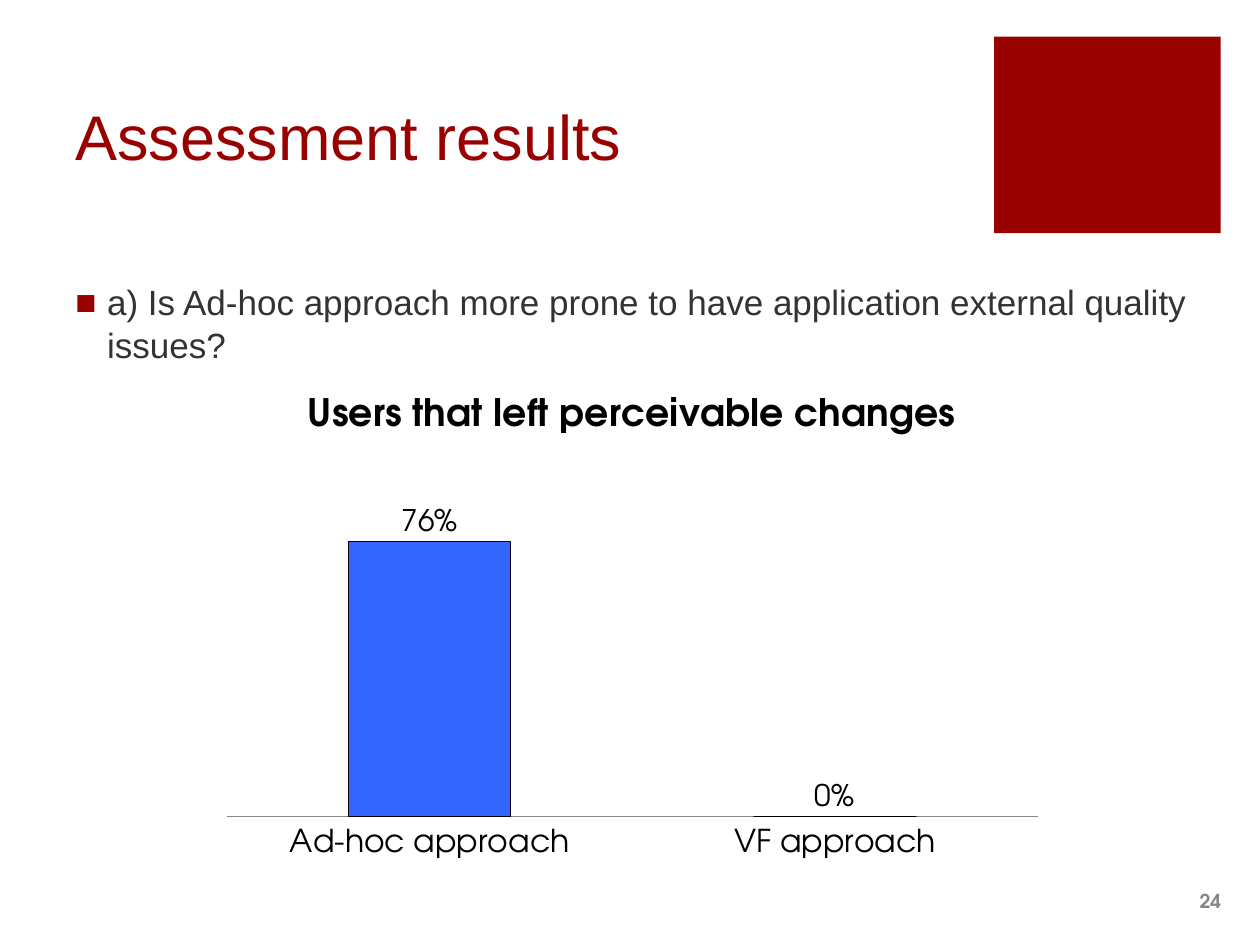
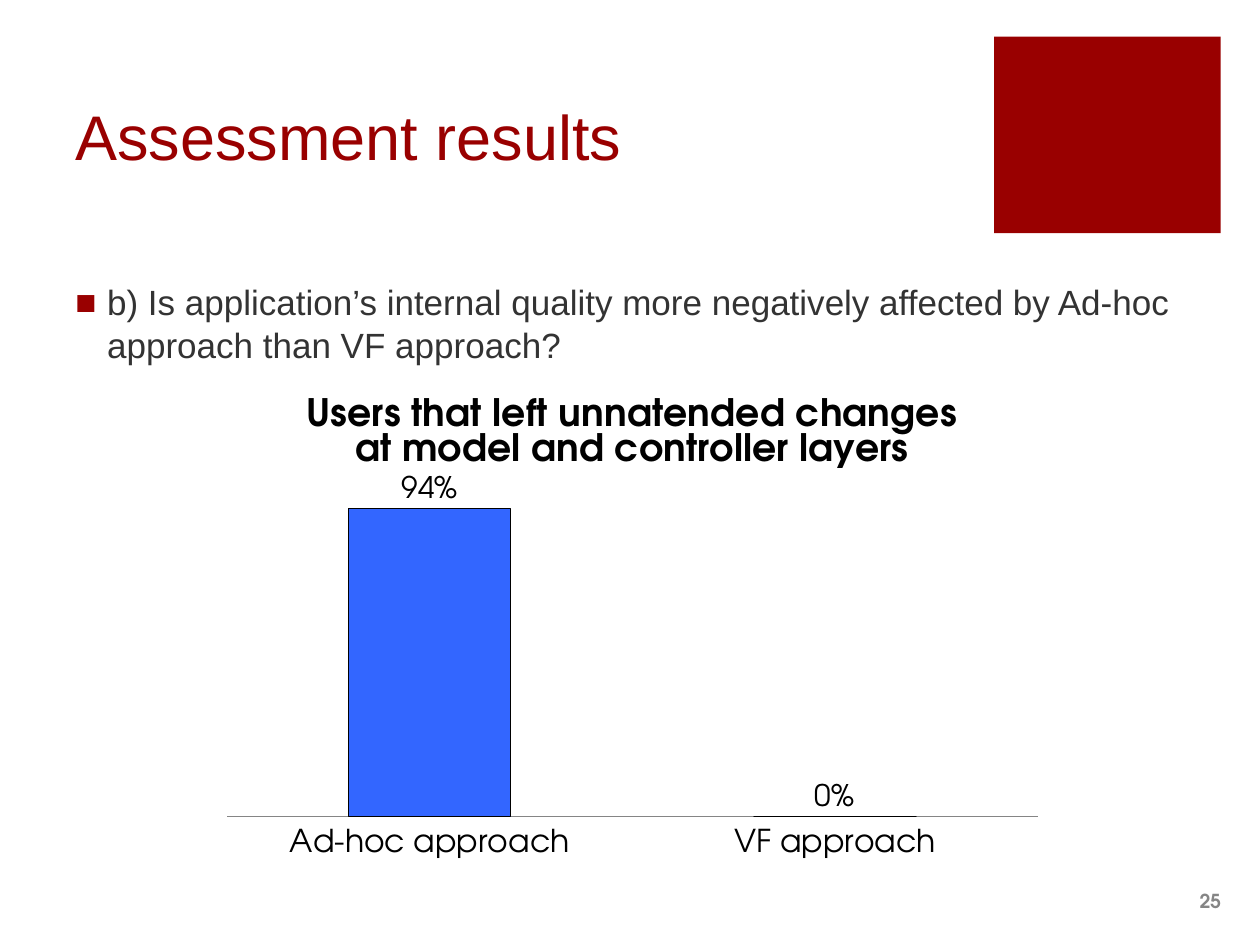
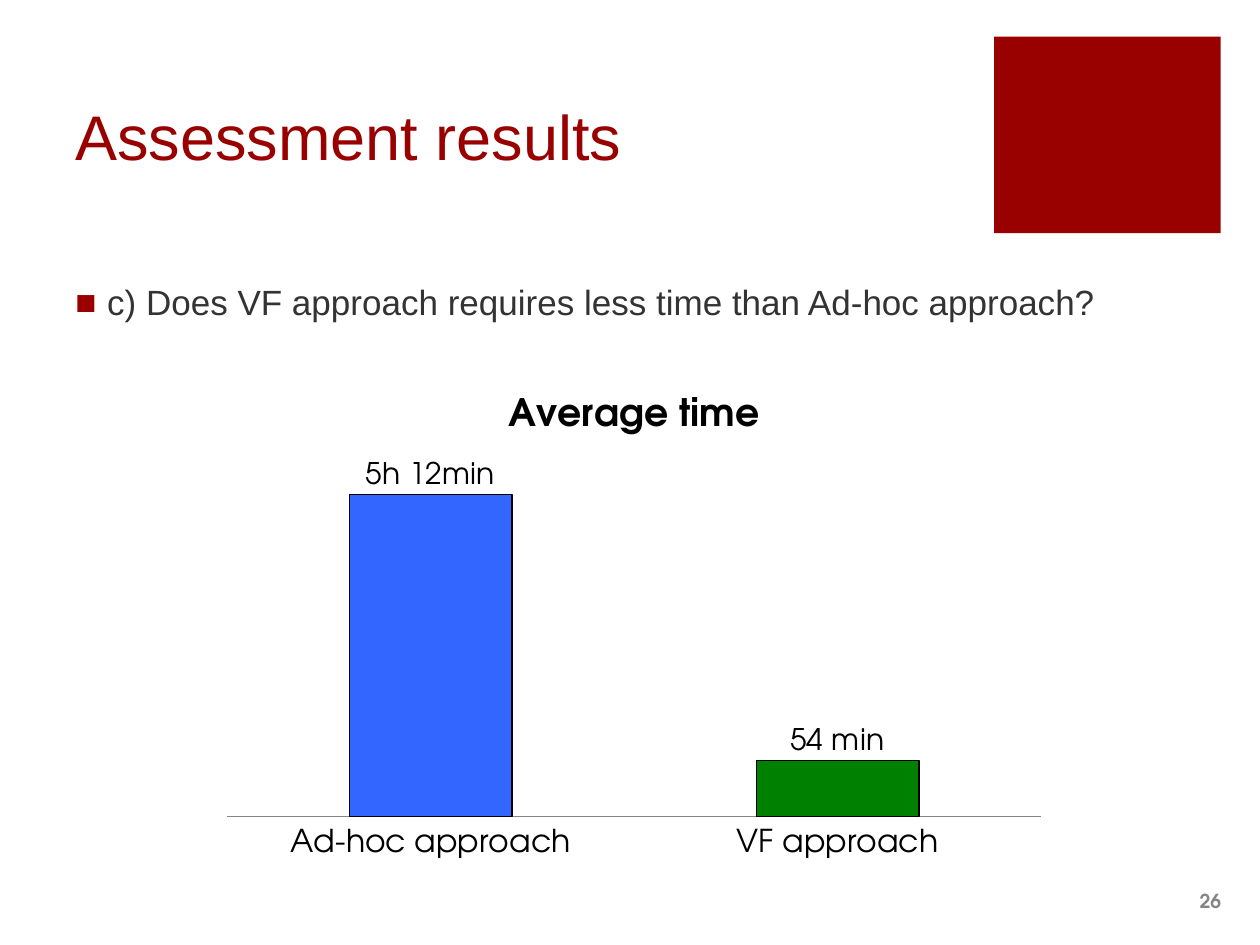
from dataclasses import dataclass

from lxml import etree
from pptx import Presentation
from pptx.chart.data import CategoryChartData
from pptx.dml.color import RGBColor
from pptx.enum.chart import XL_CHART_TYPE, XL_LABEL_POSITION, XL_TICK_LABEL_POSITION, XL_TICK_MARK
from pptx.enum.shapes import MSO_SHAPE
from pptx.enum.text import MSO_ANCHOR, PP_ALIGN
from pptx.oxml import parse_xml
from pptx.oxml.ns import nsdecls, qn
from pptx.util import Cm, Pt

COLUMNS = XL_CHART_TYPE.COLUMN_CLUSTERED
OUTSIDE_END = XL_LABEL_POSITION.OUTSIDE_END
LABELS_LOW = XL_TICK_LABEL_POSITION.LOW
NO_TICKS = XL_TICK_MARK.NONE
RECTANGLE = MSO_SHAPE.RECTANGLE
TOP, MIDDLE = MSO_ANCHOR.TOP, MSO_ANCHOR.MIDDLE
LEFT, RIGHT = PP_ALIGN.LEFT, PP_ALIGN.RIGHT


@dataclass(frozen=True)
class Theme:
    accent: str = "990000"
    body: str = "333333"
    footer: str = "858585"
    ink: str = "000000"
    blue: str = "3366FF"
    green: str = "008000"
    text_font: str = "Arial"
    chart_font: str = "TeX Gyre Adventor"
    title_size: float = 36
    body_size: float = 20
    footer_size: float = 11
    chart_title_size: float = 21.6
    axis_size: float = 18
    label_size: float = 17
    bar_line: float = 0.75
    axis_line: float = 1


THEME = Theme()


@dataclass(frozen=True)
class Box:
    """A region of the slide, in centimetres."""
    left: float
    top: float
    width: float
    height: float

    def emu(self):
        return Cm(self.left), Cm(self.top), Cm(self.width), Cm(self.height)


TITLE_BOX = Box(1.27, 0.74, 18.08, 3.96)
ACCENT_BOX = Box(20.04, 0.74, 4.57, 3.96)
QUESTION_BOX = Box(1.27, 5.54, 23.34, 11.48)
NUMBER_BOX = Box(22.61, 17.65, 2.26, 1.02)
CHART_BOX = Box(4.24, 7.49, 17.02, 9.86)
TIME_CHART_BOX = Box(4.24, 7.49, 17.09, 9.86)
PLOT_LEFT, PLOT_WIDTH, PLOT_BOTTOM = 0.02, 0.96, 0.91


@dataclass(frozen=True)
class Result:
    """One assessed question and the measurements that answer it."""
    number: int
    question: str
    chart_title: str
    values: tuple
    bar_colors: tuple
    series_name: str = ""
    axis_max: float = 1
    value_format: str = "0%"
    value_texts: tuple = ()
    box: Box = CHART_BOX
    plot_top: float = 0.17


APPROACHES = ("Ad-hoc approach", "VF approach")
RESULTS = (
    Result(24, "a) Is Ad-hoc approach more prone to have application external quality issues?",
           "Users that left perceivable changes", (0.76, 0), (THEME.blue, THEME.green)),
    Result(25, "b) Is application’s internal quality more negatively affected by Ad-hoc "
           "approach than VF approach?",
           "Users that left unnatended changes at model and controller layers",
           (0.94, 0), (THEME.blue, THEME.blue), plot_top=0.24),
    Result(26, "c) Does VF approach requires less time than Ad-hoc approach?",
           "Average time", (5.2, 0.9), (THEME.blue, THEME.green), series_name="Series 1",
           axis_max=6, value_format="General", value_texts=("5h 12min", "54 min"),
           box=TIME_CHART_BOX, plot_top=0.15),
)


def style_font(font, family, size, color, bold=False):
    font.name = family
    font.size = Pt(size)
    font.bold = bold
    font.color.rgb = RGBColor.from_string(color)


def add_text(slide, box, text, family, size, color, bold=False, align=LEFT, anchor=MIDDLE):
    """Add a wrapped one-paragraph text box and return its paragraph."""
    frame = slide.shapes.add_textbox(*box.emu()).text_frame
    frame.word_wrap = True
    frame.vertical_anchor = anchor
    paragraph = frame.paragraphs[0]
    paragraph.alignment = align
    run = paragraph.add_run()
    run.text = text
    style_font(run.font, family, size, color, bold)
    return paragraph


def add_frame(slide, number):
    """Add the heading, accent block and slide number that every slide shares."""
    add_text(slide, NUMBER_BOX, str(number), THEME.chart_font, THEME.footer_size,
             THEME.footer, bold=True, align=RIGHT)
    accent = slide.shapes.add_shape(RECTANGLE, *ACCENT_BOX.emu())
    accent.shadow.inherit = False
    accent.fill.solid()
    accent.fill.fore_color.rgb = RGBColor.from_string(THEME.accent)
    accent.line.fill.background()
    add_text(slide, TITLE_BOX, "Assessment results", THEME.text_font, THEME.title_size,
             THEME.accent)


def add_question(slide, box, question):
    paragraph = add_text(slide, box, question, THEME.text_font, THEME.body_size,
                         THEME.body, anchor=TOP)
    paragraph.space_before = Pt(18)
    properties = paragraph._p.get_or_add_pPr()
    properties.set("marL", str(Cm(0.64)))
    properties.set("indent", str(-Cm(0.64)))
    bullet_color = etree.SubElement(properties, qn("a:buClr"))
    etree.SubElement(bullet_color, qn("a:srgbClr"), val=THEME.accent)
    etree.SubElement(properties, qn("a:buFont"), typeface=THEME.text_font)
    etree.SubElement(properties, qn("a:buChar"), char="■")


def place_plot(chart, top):
    """Fix the inner plot area, given as fractions of the chart."""
    area = chart._chartSpace.chart.plotArea
    for automatic in area.findall(qn("c:layout")):
        area.remove(automatic)
    fractions = {"x": PLOT_LEFT, "y": top, "w": PLOT_WIDTH, "h": round(PLOT_BOTTOM - top, 2)}
    sizes = "".join(f'<c:{key} val="{value}"/>' for key, value in fractions.items())
    area.insert(0, parse_xml(
        f'<c:layout {nsdecls("c")}><c:manualLayout><c:layoutTarget val="inner"/>'
        f'<c:xMode val="edge"/><c:yMode val="edge"/>{sizes}</c:manualLayout></c:layout>'))


def style_axes(chart, axis_max):
    approaches = chart.category_axis
    approaches.major_tick_mark = approaches.minor_tick_mark = NO_TICKS
    approaches.tick_label_position = LABELS_LOW
    approaches.has_major_gridlines = False
    approaches.format.line.color.rgb = RGBColor.from_string(THEME.footer)
    approaches.format.line.width = Pt(THEME.axis_line)
    for offset in approaches._element.findall(qn("c:lblOffset")):
        offset.set("val", "0")
    scale = chart.value_axis
    scale.minimum_scale, scale.maximum_scale = 0, axis_max
    scale.has_major_gridlines = False
    scale.visible = False


def style_bars(plot, result):
    plot.gap_width, plot.overlap = 150, -25
    plot.vary_by_categories = False
    bars = plot.series[0]
    bars.invert_if_negative = False
    for index, color in enumerate(result.bar_colors):
        bar = bars.points[index].format
        bar.fill.solid()
        bar.fill.fore_color.rgb = RGBColor.from_string(color)
        bar.line.color.rgb = RGBColor.from_string(THEME.ink)
        bar.line.width = Pt(THEME.bar_line)

    labels = bars.data_labels
    labels.show_value = True
    labels.position = OUTSIDE_END
    labels.number_format, labels.number_format_is_linked = result.value_format, False
    style_font(labels.font, THEME.chart_font, THEME.label_size, THEME.ink)
    for index, text in enumerate(result.value_texts):
        label = bars.points[index].data_label
        run = label.text_frame.paragraphs[0].add_run()
        run.text = text
        style_font(run.font, THEME.chart_font, THEME.label_size, THEME.ink)
        label.position = OUTSIDE_END


def add_result_chart(slide, result):
    data = CategoryChartData(number_format=result.value_format)
    data.categories = APPROACHES
    data.add_series(result.series_name or result.chart_title, result.values)
    chart = slide.shapes.add_chart(COLUMNS, *result.box.emu(), data).chart
    style_font(chart.font, THEME.chart_font, THEME.axis_size, THEME.ink)
    chart.has_legend = False
    chart.has_title = True
    heading = chart.chart_title.text_frame.paragraphs[0].add_run()
    heading.text = result.chart_title
    style_font(heading.font, THEME.chart_font, THEME.chart_title_size, THEME.ink, bold=True)
    chart.chart_title.include_in_layout = False
    place_plot(chart, result.plot_top)
    style_axes(chart, result.axis_max)
    style_bars(chart.plots[0], result)


def add_result_slide(deck, result):
    slide = deck.slides.add_slide(deck.slide_layouts[6])
    add_frame(slide, result.number)
    add_question(slide, QUESTION_BOX, result.question)
    add_result_chart(slide, result)


def main():
    deck = Presentation()
    deck.slide_width, deck.slide_height = Cm(25.4), Cm(19.05)
    for result in RESULTS:
        add_result_slide(deck, result)
    deck.save("out.pptx")


if __name__ == "__main__":
    main()
